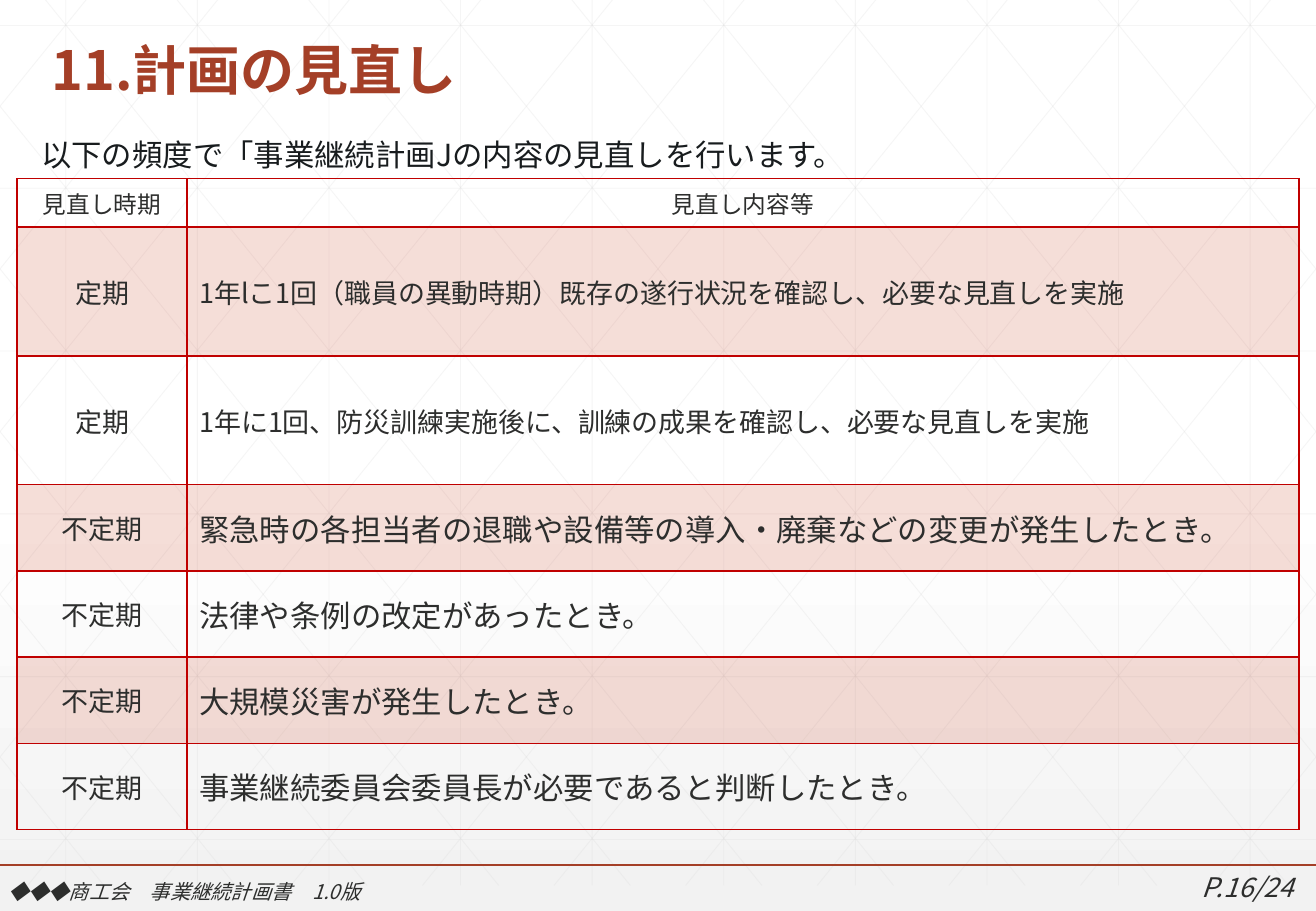
import copy
from collections import namedtuple

import pptx
import pptx.dml.color
import pptx.enum.shapes
import pptx.enum.text
import pptx.oxml
import pptx.oxml.ns
import pptx.util

Box = namedtuple("Box", "left top width height")
PAGE = Box(0, 0, pptx.util.Inches(10.83), pptx.util.Inches(7.5))
FONT = "Noto Sans CJK JP"
COLORS = {
    "white": "FFFFFF", "mist": "F2F2F2", "grid": "D9D9D9", "accent": "A43F27",
    "text": "2D2E2D", "lead": "181C1E", "border": "C00000", "band": "D15A3E",
}
ALIGN = pptx.enum.text.PP_ALIGN
ANCHOR = pptx.enum.text.MSO_ANCHOR
REVIEWS = [
    ("見直し時期", "見直し内容等", 14, 14, 0.4),
    ("定期", "1年lこ1回（職員の異動時期）既存の遂行状況を確認し、必要な見直しを実施", 16, 16, 1.06),
    ("定期", "1年に1回、防災訓練実施後に、訓練の成果を確認し、必要な見直しを実施", 16, 16, 1.06),
    ("不定期", "緊急時の各担当者の退職や設備等の導入・廃棄などの変更が発生したとき。", 16, 18, 0.71),
    ("不定期", "法律や条例の改定があったとき。", 16, 18, 0.71),
    ("不定期", "大規模災害が発生したとき。", 16, 18, 0.71),
    ("不定期", "事業継続委員会委員長が必要であると判断したとき。", 16, 18, 0.71),
]
COLUMN_WEIGHTS = (1.4, 9.15)


def percent_box(box, left, top, width, height):
    return Box(
        round(box.left + box.width * left / 100),
        round(box.top + box.height * top / 100),
        round(box.width * width / 100),
        round(box.height * height / 100),
    )


def rgb(name):
    return pptx.dml.color.RGBColor.from_string(COLORS[name])


def xml(tag, attributes="", inner=""):
    namespace = pptx.oxml.ns.nsdecls("a")
    return pptx.oxml.parse_xml(f"<a:{tag} {namespace} {attributes}>{inner}</a:{tag}>")


def set_alpha(fill_parent, percent):
    color = fill_parent.find(".//" + pptx.oxml.ns.qn("a:srgbClr"))
    color.append(xml("alpha", f'val="{percent * 1000}"'))


def write(text_frame, text, size, color="text", align=ALIGN.LEFT, bold=False, italic=False):
    text_frame.word_wrap = True
    paragraph = text_frame.paragraphs[0]
    paragraph.text = text
    paragraph.alignment = align
    for run in paragraph.runs:
        run.font.name = FONT
        run.font.size = pptx.util.Pt(size)
        run.font.bold = bold
        run.font.italic = italic
        run.font.color.rgb = rgb(color)
        run.font._element.append(xml("ea", f'typeface="{FONT}"'))
    return paragraph


def add_text(slide, box, text, size, **style):
    text_frame = slide.shapes.add_textbox(*box).text_frame
    write(text_frame, text, size, **style)
    return text_frame


def add_line(slide, start, end, color, width):
    line = slide.shapes.add_connector(
        pptx.enum.shapes.MSO_CONNECTOR.STRAIGHT, *map(round, (*start, *end)))
    line.line.color.rgb = rgb(color)
    line.line.width = pptx.util.Pt(width)
    line._element.spPr.append(xml("effectLst"))
    return line


def add_background(slide):
    fill = slide.background.fill
    fill.gradient()
    fill.gradient_angle = 270
    stops = slide.element.find(".//" + pptx.oxml.ns.qn("a:gsLst"))
    stops.append(copy.deepcopy(stops[-1]))
    for stop, position, color in zip(fill.gradient_stops, (0, 0.53, 1), ("white", "white", "mist")):
        stop.position = position
        stop.color.rgb = rgb(color)


def add_lattice(slide, box):
    step = box.width / 10
    right = box.left + box.width
    bottom = box.top + box.height
    run = box.width * 0.56
    slope = box.height / run
    segments = []
    for column in range(10):
        x = box.left + step * (column + 0.5)
        segments.append(((x, box.top), (x, bottom)))
    for row in range(6):
        y = box.top + box.height * (0.056 + 0.1787 * row)
        segments.append(((box.left, y), (right, y)))
    for column in range(-5, 10):
        origin = box.left + step * (column + 0.19)
        ends = [(x, box.top + (x - origin) * slope)
                for x in (max(origin, box.left), min(origin + run, right))]
        segments.append(ends)
        segments.append([(box.left + right - x, y) for x, y in ends])
    for start, end in segments:
        line = add_line(slide, start, end, "grid", 0.5)
        set_alpha(line._element.spPr, 25)


def add_footer(slide, box):
    add_line(slide, box[:2], (box.left + box.width, box.top), "accent", 1)
    add_text(slide, percent_box(box, 85, 0, 14.2, 98), "P.16/24", 16,
             align=ALIGN.RIGHT, italic=True)
    add_text(slide, percent_box(box, -0.28, 18, 48.66, 79),
             "◆◆◆商工会　事業継続計画書\t1.0版", 12, italic=True)


def add_heading(slide, box):
    title = add_text(slide, percent_box(box, 0.83, 0, 100, 55.7), "11.計画の見直し", 32,
                     color="accent", bold=True)
    title.vertical_anchor = ANCHOR.BOTTOM
    title.paragraphs[0].line_spacing = 0.9
    add_text(slide, percent_box(box, 0, 69.5, 100, 30.5),
             "以下の頻度で「事業継続計画Jの内容の見直しを行います。", 18, color="lead")


def style_cell(cell, banded):
    cell.vertical_anchor = ANCHOR.MIDDLE
    if banded:
        cell.fill.solid()
        cell.fill.fore_color.rgb = rgb("band")
    else:
        cell.fill.background()
    properties = cell._tc.get_or_add_tcPr()
    if banded:
        set_alpha(properties, 20)
    ink = f'<a:solidFill><a:srgbClr val="{COLORS["border"]}"/></a:solidFill>'
    for index, side in enumerate("LRTB"):
        properties.insert(index, xml("ln" + side, f'w="{pptx.util.Pt(1)}"', ink))


def add_review_table(slide, box):
    table = slide.shapes.add_table(len(REVIEWS), len(COLUMN_WEIGHTS), *box).table
    table.first_row = False
    table.horz_banding = False
    for column, weight in zip(table.columns, COLUMN_WEIGHTS):
        column.width = round(box.width * weight / sum(COLUMN_WEIGHTS))
    total = sum(review[-1] for review in REVIEWS)
    for index, (period, content, period_size, content_size, weight) in enumerate(REVIEWS):
        table.rows[index].height = round(box.height * weight / total)
        content_align = ALIGN.LEFT if index else ALIGN.CENTER
        entries = ((period, period_size, ALIGN.CENTER), (content, content_size, content_align))
        for cell, (text, size, align) in zip(table.rows[index].cells, entries):
            write(cell.text_frame, text, size, align=align)
            style_cell(cell, index % 2 == 1)


def main():
    presentation = pptx.Presentation()
    presentation.slide_width = PAGE.width
    presentation.slide_height = PAGE.height
    slide = presentation.slides.add_slide(presentation.slide_layouts[6])
    add_background(slide)
    add_lattice(slide, percent_box(PAGE, 0, -2.8, 100, 100))
    add_footer(slide, percent_box(PAGE, 0, 94.93, 100, 5.07))
    add_heading(slide, percent_box(PAGE, 2.22, 2.13, 93.72, 17.47))
    add_review_table(slide, percent_box(PAGE, 1.29, 19.6, 97.41, 71.47))
    presentation.save("out.pptx")


if __name__ == "__main__":
    main()
